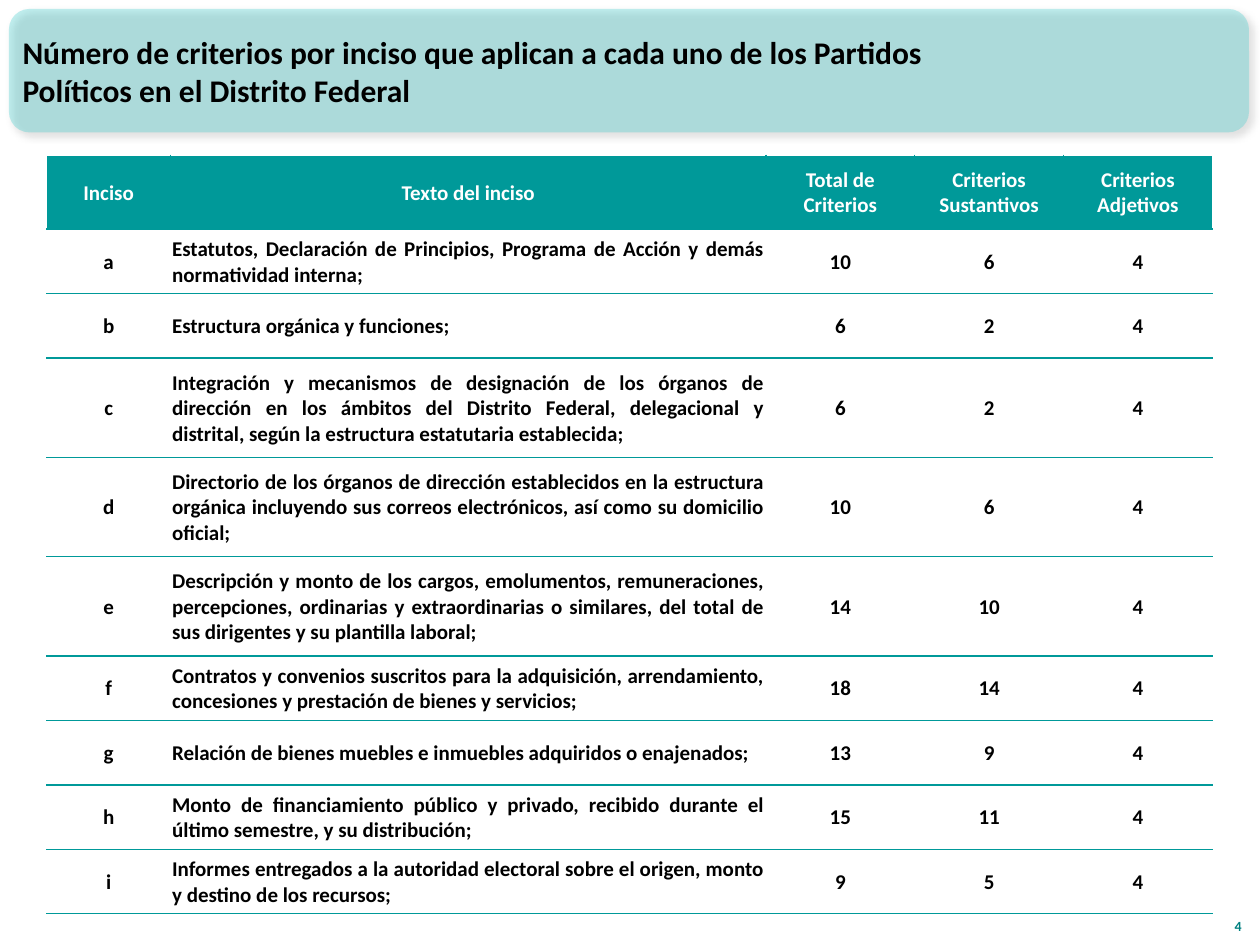
from typing import NamedTuple

from lxml.etree import SubElement
from pptx import Presentation
from pptx.dml.color import RGBColor
from pptx.enum.shapes import MSO_SHAPE
from pptx.enum.text import MSO_ANCHOR, MSO_AUTO_SIZE, PP_ALIGN
from pptx.oxml import parse_xml
from pptx.oxml.ns import nsdecls, qn
from pptx.util import Cm, Pt

TEAL = RGBColor(0x00, 0x99, 0x99)
DARK_TEAL = RGBColor(0x00, 0x80, 0x80)
AQUA = RGBColor(0x33, 0xCC, 0xCC)
BLACK = RGBColor(0, 0, 0)
WHITE = RGBColor(0xFF, 0xFF, 0xFF)
FONT = "Calibri"
NO_STYLE = "{2D5ABB26-0587-4C30-8999-92F81FD0307C}"

TITLE = ("Número de criterios por inciso que aplican a cada uno de los "
         "Partidos Políticos en el Distrito Federal")
HEADERS = ("Inciso", "Texto del inciso", "Total de Criterios",
           "Criterios Sustantivos", "Criterios Adjetivos")
COL_WIDTHS = (Cm(2.5), Cm(12), Cm(3), Cm(3), Cm(3))
HEADER_HEIGHT = Cm(1.49)
SHORT_ROW, TALL_ROW = Cm(1.3), Cm(2)


class Inciso(NamedTuple):
    letter: str
    text: str
    substantive: int
    adjective: int = 4
    height: int = SHORT_ROW

    def values(self) -> tuple:
        total = self.substantive + self.adjective
        return (self.letter, self.text, str(total),
                str(self.substantive), str(self.adjective))


INCISOS = (
    Inciso("a", "Estatutos, Declaración de Principios, Programa de Acción y "
           "demás normatividad interna;", 6),
    Inciso("b", "Estructura orgánica y funciones;", 2),
    Inciso("c", "Integración y mecanismos de designación de los órganos de "
           "dirección en los ámbitos del Distrito Federal, delegacional y "
           "distrital, según la estructura estatutaria establecida;",
           2, height=TALL_ROW),
    Inciso("d", "Directorio de los órganos de dirección establecidos en la "
           "estructura orgánica incluyendo sus correos electrónicos, así como "
           "su domicilio oficial;", 6, height=TALL_ROW),
    Inciso("e", "Descripción y monto de los cargos, emolumentos, "
           "remuneraciones, percepciones, ordinarias y extraordinarias o "
           "similares, del total de sus dirigentes y su plantilla laboral;",
           10, height=TALL_ROW),
    Inciso("f", "Contratos y convenios suscritos para la adquisición, "
           "arrendamiento, concesiones y prestación de bienes y servicios;", 14),
    Inciso("g", "Relación de bienes muebles e inmuebles adquiridos o "
           "enajenados;", 9),
    Inciso("h", "Monto de financiamiento público y privado, recibido durante "
           "el último semestre, y su distribución;", 11),
    Inciso("i", "Informes entregados a la autoridad electoral sobre el origen, "
           "monto y destino de los recursos;", 5),
)


def write(tf, text: str, *, size: float, color: RGBColor,
          align=PP_ALIGN.LEFT, anchor=MSO_ANCHOR.MIDDLE) -> None:
    tf.word_wrap = True
    tf.vertical_anchor = anchor
    p = tf.paragraphs[0]
    p.alignment = align
    r = p.add_run()
    r.text = text
    r.font.name, r.font.size, r.font.bold = FONT, Pt(size), True
    r.font.color.rgb = color


def add_title_panel(s) -> None:
    panel = s.shapes.add_shape(MSO_SHAPE.ROUNDED_RECTANGLE,
                               Cm(0.18), Cm(0.18), Cm(25), Cm(2.49))
    panel.line.fill.background()
    panel.fill.solid()
    panel.fill.fore_color.rgb = AQUA
    color = panel.fill._xPr.find(qn("a:solidFill"))[0]
    SubElement(color, qn("a:alpha"), val="30000")
    panel.shadow.inherit = False
    effects = panel._element.spPr.find(qn("a:effectLst"))
    effects.append(parse_xml(
        f'<a:outerShdw {nsdecls("a")} blurRad="{Pt(4)}" dist="{Pt(3)}" '
        'dir="2700000" algn="tl" rotWithShape="0"><a:srgbClr val="000000">'
        '<a:alpha val="40000"/></a:srgbClr></a:outerShdw>'))
    s.shapes._spTree.insert(2, panel._element)  # behind the title


def set_borders(cell, **borders: tuple[RGBColor, float]) -> None:
    """Draw the given sides (L, R, T, B), each a colour and a width in points."""
    tcPr = cell._tc.get_or_add_tcPr()
    sides = [side for side in "LRTB" if side in borders]
    for i, side in enumerate(sides):
        color, width = borders[side]
        tcPr.insert(i, parse_xml(
            f'<a:ln{side} {nsdecls("a")} w="{Pt(width)}"><a:solidFill>'
            f'<a:srgbClr val="{color}"/></a:solidFill></a:ln{side}>'))


def fill_row(table, row: int, values: tuple) -> None:
    header = row == 0
    rule, edge = (TEAL, 1), (WHITE, 0.75)
    last = len(values) - 1
    for col, text in enumerate(values):
        cell = table.cell(row, col)
        cell.margin_left = cell.margin_right = cell.margin_top = Cm(0.03)
        cell.margin_bottom = 0
        cell.vertical_anchor = MSO_ANCHOR.MIDDLE
        justified = col == 1 and not header
        write(cell.text_frame, text, size=12, color=WHITE if header else BLACK,
              align=PP_ALIGN.JUSTIFY if justified else PP_ALIGN.CENTER)
        borders = {"T": edge if header else rule, "B": rule}
        if header:
            cell.fill.solid()
            cell.fill.fore_color.rgb = TEAL
            borders |= {"L": rule, "R": rule}
        else:
            cell.fill.background()
        if col == 0:
            borders["L"] = edge
        if col == last:
            borders["R"] = edge
        set_borders(cell, **borders)


def add_criteria_table(s) -> None:
    heights = (HEADER_HEIGHT, *(inciso.height for inciso in INCISOS))
    frame = s.shapes.add_table(len(heights), len(HEADERS), Cm(0.94), Cm(3.13),
                               sum(COL_WIDTHS), sum(heights))
    table = frame.table
    table.horz_banding = False
    table._tbl.tblPr.find(qn("a:tableStyleId")).text = NO_STYLE
    for column, width in zip(table.columns, COL_WIDTHS):
        column.width = width
    for row, height in zip(table.rows, heights):
        row.height = height
    fill_row(table, 0, HEADERS)
    for i, inciso in enumerate(INCISOS, start=1):
        fill_row(table, i, inciso.values())


def main() -> None:
    prs = Presentation()
    prs.slide_width, prs.slide_height = Cm(25.4), Cm(19.05)
    s = prs.slides.add_slide(prs.slide_layouts[5])

    title = s.shapes.title
    title.left, title.top = Cm(0.2), Cm(0.23)
    title.width, title.height = Cm(21), Cm(2.4)
    title.text_frame.auto_size = MSO_AUTO_SIZE.NONE
    write(title.text_frame, TITLE, size=18, color=BLACK)
    add_title_panel(s)

    number = s.shapes.add_textbox(Cm(24.26), Cm(17.93), Cm(1.02), Cm(1.02))
    write(number.text_frame, "4", size=8, color=DARK_TEAL,
          align=PP_ALIGN.RIGHT, anchor=MSO_ANCHOR.BOTTOM)
    add_criteria_table(s)
    prs.save("out.pptx")


if __name__ == "__main__":
    main()
